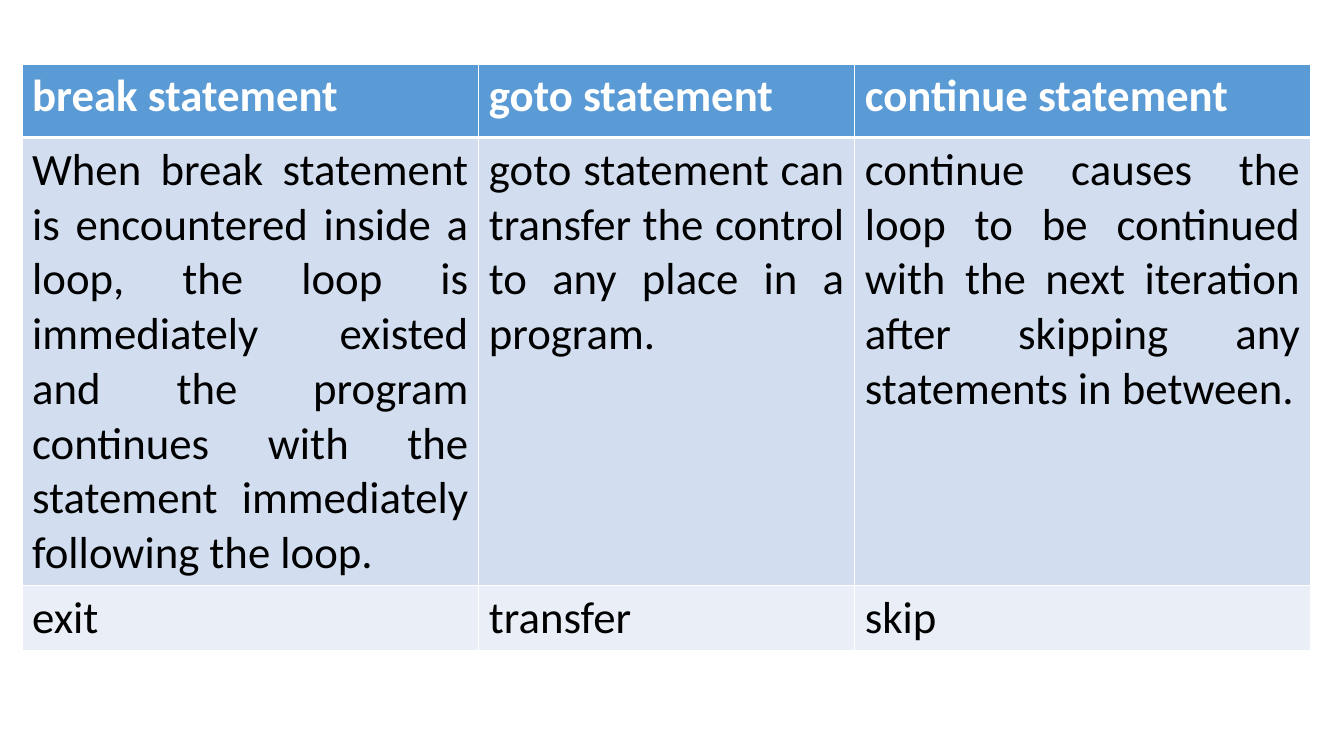
import pptx
import pptx.dml.color
import pptx.enum.text
import pptx.oxml
import pptx.oxml.ns
import pptx.util

PX = 9525  # EMU per px, 96 px to the inch
COLORS = {
    "header": "5B9BD5",
    "description": "D2DEEF",
    "summary": "EAEFF7",
    "rule": "FFFFFF",
    "header_text": "FFFFFF",
    "body_text": "000000",
}
STATEMENTS = [
    ("break statement",
     "When break statement is encountered inside a loop, the loop is "
     "immediately existed and the program continues with the statement "
     "immediately following the loop.",
     "exit"),
    ("goto statement",
     "goto statement can transfer the control to any place in a program.",
     "transfer"),
    ("continue statement",
     "continue causes the loop to be continued with the next iteration "
     "after skipping any statements in between.",
     "skip"),
]
ROWS = [("header", 70), ("description", 427), ("summary", 61)]
COLUMN_WIDTHS = [435, 358, 434]


def px(length):
    return pptx.util.Emu(length * PX)


def rgb(name):
    return pptx.dml.color.RGBColor.from_string(COLORS[name])


def add_borders(cell, top, bottom):
    """Rule the four sides of a cell; widths are in points."""
    properties = cell._tc.get_or_add_tcPr()
    sides = [("L", 1), ("R", 1), ("T", top), ("B", bottom)]
    for position, (side, width) in enumerate(sides):
        line = pptx.oxml.parse_xml(
            f'<a:ln{side} {pptx.oxml.ns.nsdecls("a")} w="{pptx.util.Pt(width)}">'
            f'<a:solidFill><a:srgbClr val="{COLORS["rule"]}"/></a:solidFill>'
            f'</a:ln{side}>')
        properties.insert(position, line)


def format_cell(cell, text, role):
    cell.fill.solid()
    cell.fill.fore_color.rgb = rgb(role)
    add_borders(cell,
                top=3 if role == "description" else 1,
                bottom=3 if role == "header" else 1)
    cell.text_frame.text = text
    paragraph = cell.text_frame.paragraphs[0]
    if role == "description":
        paragraph.alignment = pptx.enum.text.PP_ALIGN.JUSTIFY
    font = paragraph.runs[0].font
    font.name = "Calibri"
    font.size = pptx.util.Pt(32)
    font.bold = role == "header"
    font.color.rgb = rgb("header_text" if role == "header" else "body_text")


def add_comparison(slide, left, top):
    """Compare the jump statements, one per column."""
    width = sum(COLUMN_WIDTHS)
    height = sum(row_height for _, row_height in ROWS)
    comparison = slide.shapes.add_table(
        len(ROWS), len(STATEMENTS), px(left), px(top), px(width), px(height)).table
    for column, column_width in zip(comparison.columns, COLUMN_WIDTHS):
        column.width = px(column_width)
    for r, (role, row_height) in enumerate(ROWS):
        comparison.rows[r].height = px(row_height)
        for c, statement in enumerate(STATEMENTS):
            format_cell(comparison.cell(r, c), statement[r], role)


def main():
    deck = pptx.Presentation()
    deck.slide_width, deck.slide_height = px(1280), px(720)
    slide = deck.slides.add_slide(deck.slide_layouts[6])  # blank layout
    add_comparison(slide, left=21, top=61)
    deck.save("out.pptx")


if __name__ == "__main__":
    main()
